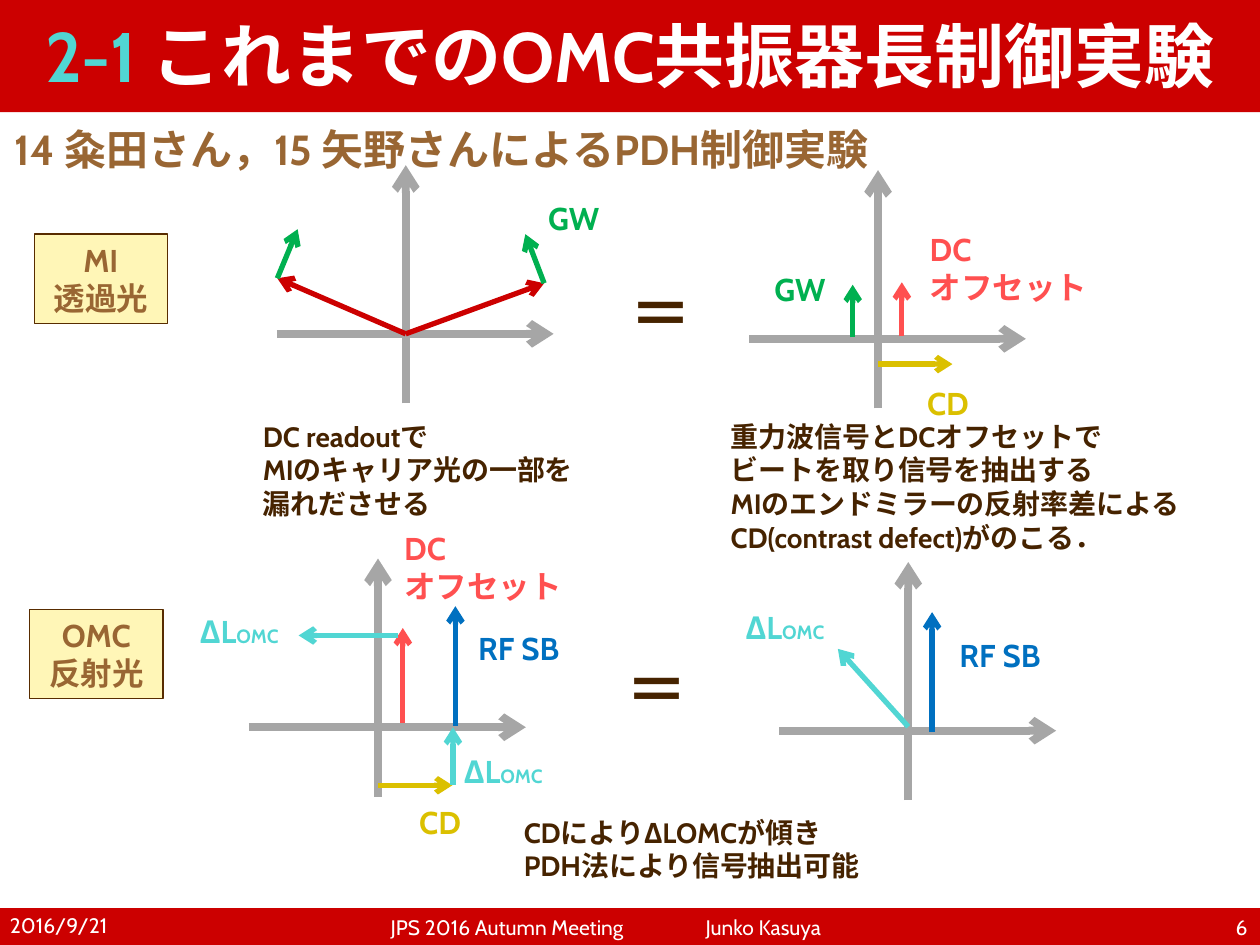
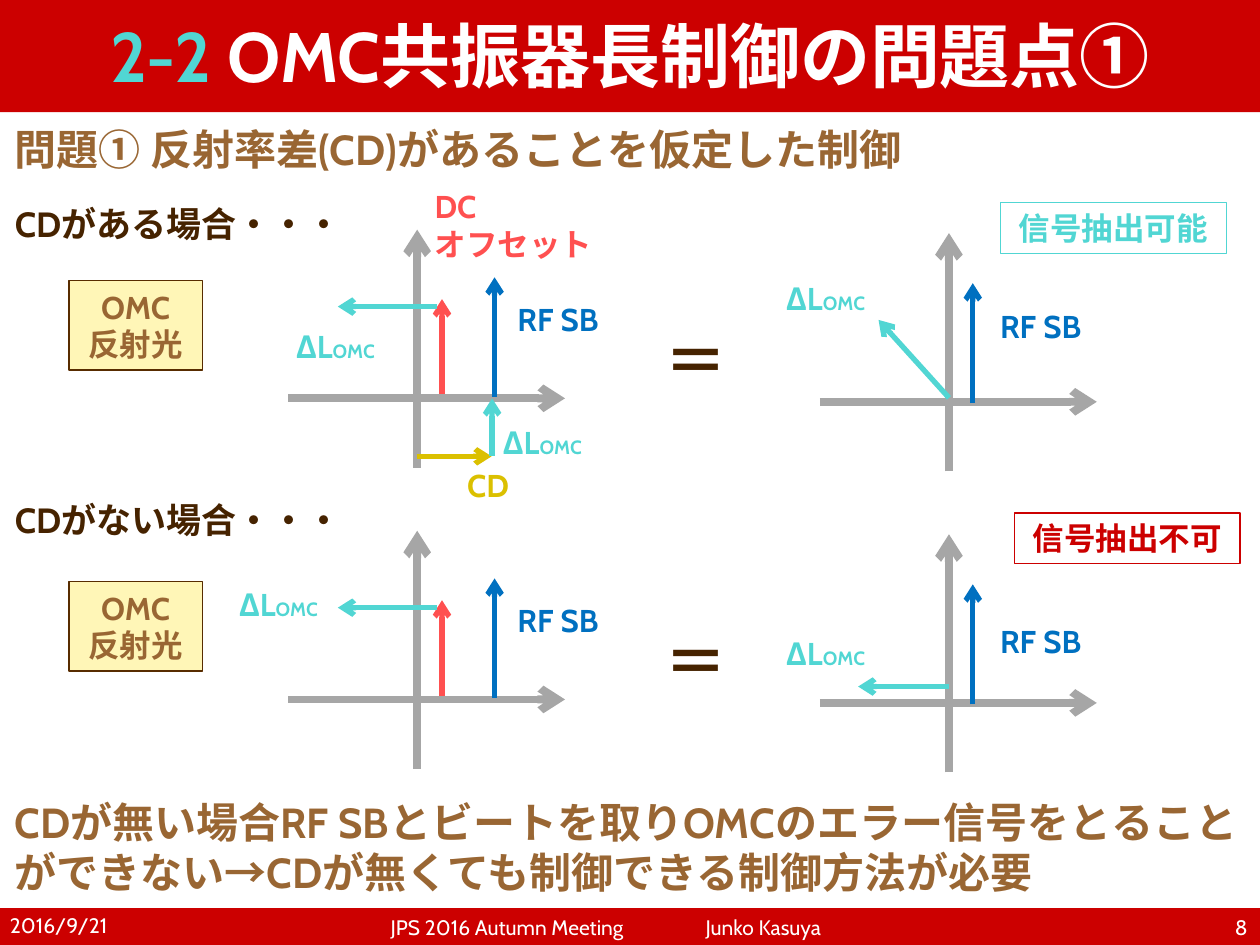
from lxml import etree
from pptx import Presentation
from pptx.dml.color import RGBColor
from pptx.enum.shapes import MSO_CONNECTOR, MSO_SHAPE
from pptx.enum.text import MSO_ANCHOR, PP_ALIGN
from pptx.oxml.ns import qn
from pptx.util import Cm, Pt

LEFT, CENTER, RIGHT = PP_ALIGN.LEFT, PP_ALIGN.CENTER, PP_ALIGN.RIGHT
TOP, MIDDLE = MSO_ANCHOR.TOP, MSO_ANCHOR.MIDDLE
RECTANGLE, STRAIGHT = MSO_SHAPE.RECTANGLE, MSO_CONNECTOR.STRAIGHT

FONT = "Cabin"
RED, WHITE, GRAY = "CC0000", "FFFFFF", "A6A6A6"
TEAL, BROWN, DARK = "51D6D3", "996633", "462300"
CORAL, GREEN, BLUE, GOLD = "FF5050", "00B050", "0070C0", "DBC000"
CREAM, BOX_EDGE = "FFF6B7", "582C00"
WIDTH, HEIGHT = 25.4, 19.05


def rgb(code):
    return RGBColor.from_string(code)


def write(shape, text, color=DARK, size=18, bold=True, align=LEFT, anchor=TOP):
    frame = shape.text_frame
    frame.word_wrap = True
    frame.vertical_anchor = anchor
    for index, line in enumerate(text.split("\n")):
        paragraph = frame.add_paragraph() if index else frame.paragraphs[-1]
        paragraph.alignment = align
        run = paragraph.add_run()
        run.text = line
        run.font.name = FONT
        run.font.size = Pt(size)
        run.font.bold = bold
        run.font.color.rgb = rgb(color)
        east_asian = etree.SubElement(run.font._element, qn("a:ea"))
        east_asian.set("typeface", FONT)


class Deck:
    def __init__(self):
        self.presentation = Presentation()
        self.presentation.slide_width = Cm(WIDTH)
        self.presentation.slide_height = Cm(HEIGHT)
        self.slide = None

    def start_slide(self, number, section, title, heading):
        layout = self.presentation.slide_layouts[6]
        self.slide = self.presentation.slides.add_slide(layout)
        self.rectangle(0, 18.31, WIDTH, 0.74, fill=RED)
        footer = {"color": WHITE, "size": 12, "bold": False, "anchor": MIDDLE}
        self.label(-0.05, 18.14, "2016/9/21", width=5.92, height=1.02, **footer)
        self.label(19.48, 18.19, number, width=5.92, height=1.02,
                   align=RIGHT, **footer)
        self.label(6.5, 18.19, "JPS 2016 Autumn Meeting \t\tJunko Kasuya",
                   width=11.43, height=1.02, align=CENTER, **footer)
        band = self.rectangle(0, -0.08, WIDTH, 2.34, fill=RED)
        for text, color in ((section + " ", TEAL), (title, WHITE)):
            write(band, text, color, size=40, align=CENTER, anchor=MIDDLE)
        self.label(0.05, 2.36, heading, BROWN, size=24, width=22.86)

    def rectangle(self, left, top, width, height, fill=None, edge=None):
        shape = self.slide.shapes.add_shape(
            RECTANGLE, Cm(left), Cm(top), Cm(width), Cm(height))
        shape.shadow.inherit = False
        if fill:
            shape.fill.solid()
            shape.fill.fore_color.rgb = rgb(fill)
        else:
            shape.fill.background()
        if edge:
            shape.line.color.rgb = rgb(edge)
            shape.line.width = Pt(0.75)
        else:
            shape.line.fill.background()
        return shape

    def label(self, left, top, text, color=DARK, width=4, height=1, **style):
        box = self.slide.shapes.add_textbox(
            Cm(left), Cm(top), Cm(width), Cm(height))
        write(box, text, color, **style)
        return box

    def source_box(self, left, top, text):
        box = self.rectangle(left, top, 2.69, 1.8, CREAM, BOX_EDGE)
        write(box, text, BROWN, align=CENTER, anchor=MIDDLE)

    def verdict(self, left, top, text, color):
        box = self.rectangle(left, top, 4.55, 1.02, edge=color)
        write(box, text, color, align=CENTER, anchor=MIDDLE)

    def equals(self, left, top):
        self.label(left, top, "＝", size=36, width=2.16, height=1.8)

    def delta_label(self, left, top):
        box = self.label(left, top, "ΔL", TEAL)
        write(box, "OMC", TEAL, size=11)

    def arrow(self, origin, start, end, color, weight=3):
        x, y = origin
        connector = self.slide.shapes.add_connector(
            STRAIGHT, Cm(x + start[0]), Cm(y + start[1]),
            Cm(x + end[0]), Cm(y + end[1]))
        connector.line.color.rgb = rgb(color)
        connector.line.width = Pt(weight)
        properties = connector._element.spPr
        head = etree.SubElement(properties.find(qn("a:ln")), qn("a:tailEnd"))
        head.set("type", "arrow")
        etree.SubElement(properties, qn("a:effectLst"))

    def axes(self, origin):
        self.arrow(origin, (0, 1.4), (0, -3.4), GRAY, 4.5)
        self.arrow(origin, (-2.6, 0), (2.98, 0), GRAY, 4.5)

    def reflected_fields(self, origin, delta_at, offset_at=None, defect_at=None):
        x, y = origin
        self.arrow(origin, (0.5, -0.03), (0.5, -2), CORAL)
        self.axes(origin)
        if offset_at:
            self.label(x + offset_at[0], y + offset_at[1],
                       "DC\nオフセット", CORAL, width=6, height=1.8)
        self.arrow(origin, (0.4, -1.85), (-1.6, -1.85), TEAL)
        self.delta_label(x + delta_at[0], y + delta_at[1])
        if defect_at:
            self.arrow(origin, (0, 1.17), (1.5, 1.17), GOLD)
            self.label(x + defect_at[0], y + defect_at[1], "CD", GOLD)
            self.delta_label(x + 1.48, y + 0.37)
            self.arrow(origin, (1.51, 1.17), (1.51, 0), TEAL)
        self.arrow(origin, (1.56, -0.03), (1.56, -2.44), BLUE)
        self.label(x + 1.77, y - 2.11, "RF SB", BLUE)
        self.equals(x + 4.74, y - 1.68)
        self.source_box(x - 7.02, y - 2.37, "OMC\n反射光")

    def combined_fields(self, origin, start=(0, -0.08), end=(-1.42, -1.65),
                        delta_top=-2.59, sideband_top=-2.03):
        x, y = origin
        self.axes(origin)
        self.arrow(origin, start, end, TEAL)
        self.delta_label(x - 3.53, y + delta_top)
        self.arrow(origin, (0.48, 0.03), (0.48, -2.39), BLUE)
        self.label(x + 0.78, y + sideband_top, "RF SB", BLUE)

    def transmitted_fields(self, origin):
        x, y = origin
        self.axes(origin)
        for carrier, signal in (((-2.59, -1.12), (-2.18, -2.11)),
                                ((2.79, -1.02), (2.41, -2.01))):
            self.arrow(origin, (0, 0), carrier, RED)
            self.arrow(origin, carrier, signal, GREEN)
        self.label(x + 2.62, y - 2.84, "GW", GREEN)
        self.source_box(x - 7.49, y - 2.01, "MI\n透過光")
        self.equals(x + 4.27, y - 1.32)

    def decomposed_fields(self, origin):
        x, y = origin
        self.axes(origin)
        self.arrow(origin, (0.48, -0.05), (0.48, -1.14), CORAL)
        self.arrow(origin, (-0.51, -0.03), (-0.51, -1.09), GREEN)
        self.arrow(origin, (0, 0.51), (1.5, 0.51), GOLD)
        self.label(x - 2.34, y - 1.52, "GW", GREEN)
        self.label(x + 0.79, y - 2.31, "DC\nオフセット", CORAL,
                   width=6, height=1.8)
        self.label(x + 0.74, y + 0.79, "CD", GOLD)


def build_previous_experiments(deck):
    deck.start_slide("6", "2-1", "これまでのOMC共振器長制御実験",
                     "14 粂田さん，15 矢野さんによるPDH制御実験")
    deck.transmitted_fields((8.18, 6.73))
    deck.decomposed_fields((17.7, 6.83))
    deck.reflected_fields((7.62, 14.66), delta_at=(-3.84, -2.44),
                          offset_at=(0.28, -4.11), defect_at=(0.58, 1.4))
    deck.combined_fields((18.31, 14.73))
    explanations = (
        (5.05, 8.33, "DC readoutで\nMIのキャリア光の一部を\n漏れださせる"),
        (14.48, 8.33, "重力波信号とDCオフセットで\nビートを取り信号を抽出する\n"
                      "MIのエンドミラーの反射率差による\n"
                      "CD(contrast defect)がのこる．"),
        (10.31, 16.31, "CDによりΔLOMCが傾き\nPDH法により信号抽出可能"),
    )
    for left, top, text in explanations:
        deck.label(left, top, text, size=16, width=10.8, height=1.63)


def build_defect_problem(deck):
    deck.start_slide("8", "2-2", "OMC共振器長制御の問題点①",
                     "問題① 反射率差(CD)があることを仮定した制御")
    for top, text in ((3.96, "CDがある場合・・・"), (9.92, "CDがない場合・・・")):
        deck.label(0.05, top, text, size=20, width=8)
    deck.reflected_fields((8.41, 8.03), delta_at=(-2.69, -1.57),
                          offset_at=(0.1, -4.39), defect_at=(0.76, 1.24))
    deck.combined_fields((19.13, 8.1))
    deck.reflected_fields((8.41, 14.1), delta_at=(-3.84, -2.44))
    deck.combined_fields((19.13, 14.17), (0, -0.33), (-1.83, -0.33),
                         delta_top=-1.52, sideband_top=-1.75)
    deck.label(0.05, 15.93, "CDが無い場合RF SBとビートを取りOMCのエラー信号を"
               "とることができない→CDが無くても制御できる制御方法が必要",
               BROWN, size=24, width=25.45, height=2.82)
    deck.verdict(20.17, 4.09, "信号抽出可能", TEAL)
    deck.verdict(20.45, 10.34, "信号抽出不可", RED)


def main():
    deck = Deck()
    build_previous_experiments(deck)
    build_defect_problem(deck)
    deck.presentation.save("out.pptx")


if __name__ == "__main__":
    main()
